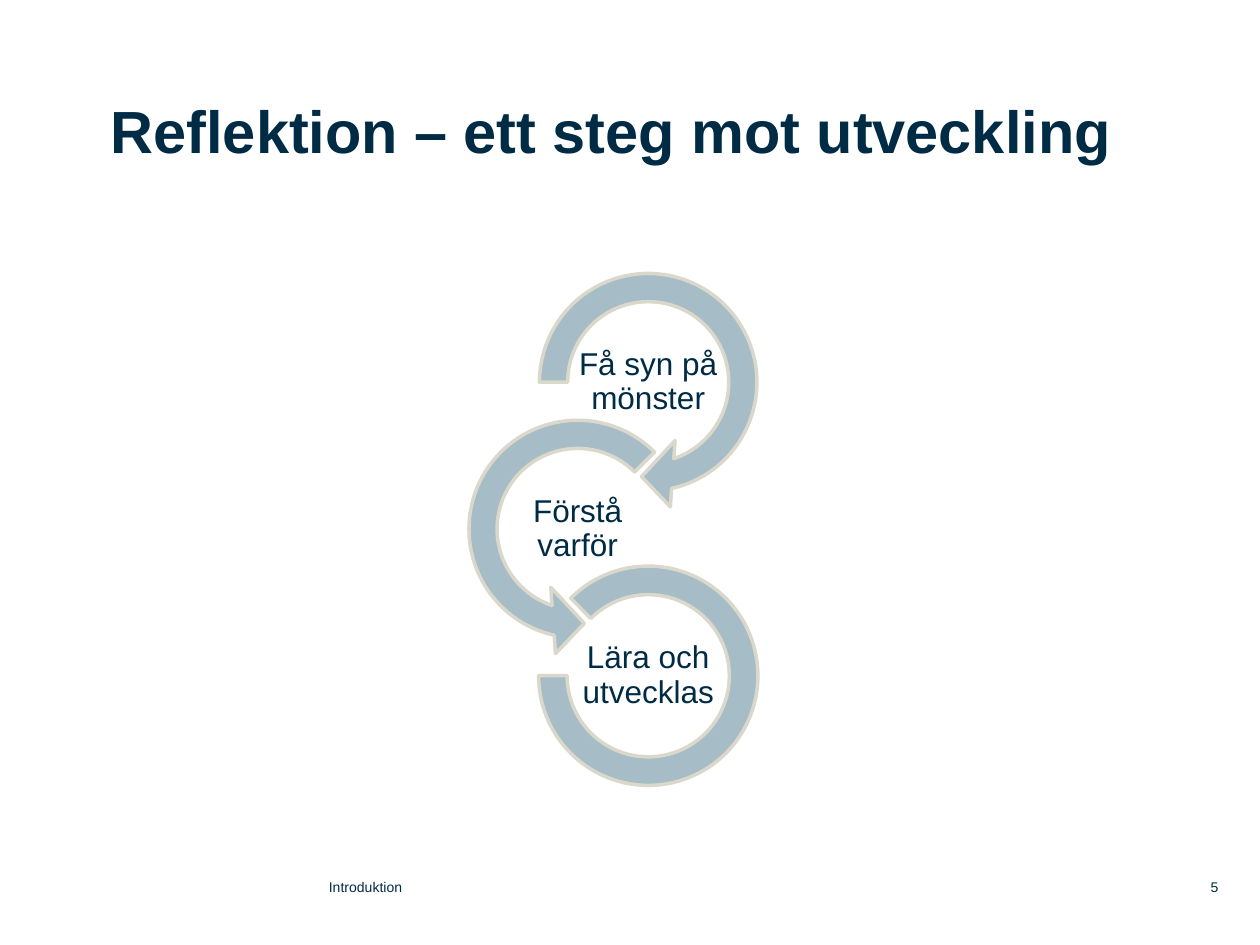
from pptx import Presentation
from pptx import util as u
from pptx.dml.color import RGBColor
from pptx.enum import shapes, text

COLORS = {"ink": "002B45", "ring": "A6BCC6", "edge": "DAD7CB"}
WIDTH, HEIGHT = u.Inches(10), u.Inches(7.5)
KINDS = shapes.MSO_SHAPE
RIGHT_X, LEFT_X = 51.45, 45.85
FIRST_Y, PITCH = 40.45, 15.53
ARROW, ARC = (20.3, 27.07), (17.4, 23.2)
LABEL = (11.3, 7.47)
STEPS = [
    ("Få syn på mönster", RIGHT_X, KINDS.CIRCULAR_ARROW, ARROW,
     (0.11, 11.42, 45, 108, 0.13)),
    ("Förstå varför", LEFT_X, KINDS.LEFT_CIRCULAR_ARROW, ARROW,
     (0.11, 11.42, 63, 189, 0.13)),
    ("Lära och utvecklas", RIGHT_X, KINDS.BLOCK_ARC, ARC, (135, 108, 0.13)),
]


def color(name):
    """Return the named colour of the palette."""
    return RGBColor.from_string(COLORS[name])


def area(x, y, w, h):
    """Turn percentages of the slide into left, top, width and height."""
    return [u.Emu(round(share * side / 100))
            for share, side in zip((x, y, w, h), (WIDTH, HEIGHT) * 2)]


def centred(x, y, size):
    """Return the area of the given size around a centre point."""
    w, h = size
    return area(x - w / 2, y - h / 2, w, h)


def add_text(parent, box, words, size, bold=False, inset=0, align="LEFT",
             anchor="MIDDLE", line=1.0, after=0):
    """Add a wrapped text box with one formatted paragraph."""
    tf = parent.add_textbox(*box).text_frame
    tf.word_wrap = True
    tf.vertical_anchor = getattr(text.MSO_ANCHOR, anchor)
    for side in ("left", "top", "right", "bottom"):
        setattr(tf, f"margin_{side}", u.Inches(inset))
    p = tf.paragraphs[0]
    p.alignment = getattr(text.PP_ALIGN, align)
    p.line_spacing, p.space_after = line, u.Pt(after)
    r = p.add_run()
    r.text = words
    r.font.name, r.font.size, r.font.bold = "Arial", u.Pt(size), bold
    r.font.color.rgb = color("ink")


def add_ring(parent, box, kind, adjustments):
    """Add one outlined ring segment."""
    sp = parent.add_shape(kind, *box)
    sp.shadow.inherit = False
    for i, value in enumerate(adjustments):
        sp.adjustments[i] = value
    sp.fill.solid()
    sp.fill.fore_color.rgb = color("ring")
    sp.line.color.rgb = color("edge")
    sp.line.width = u.Pt(2)


def add_cycle(parent):
    """Add the chain of rings with their labels as one group."""
    group = parent.add_group_shape().shapes
    for i, (words, x, kind, size, adjustments) in enumerate(STEPS):
        y = FIRST_Y + i * PITCH
        add_ring(group, centred(x, y, size), kind, adjustments)
        add_text(group, centred(x, y, LABEL), words, 18, inset=0.01,
                 align="CENTER", line=0.9, after=6.3)


def main():
    """Build the slide and save it."""
    prs = Presentation()
    prs.slide_width, prs.slide_height = WIDTH, HEIGHT
    s = prs.slides.add_slide(prs.slide_layouts[6])
    add_text(s.shapes, area(8.8, 10, 79.7, 18.93),
             "Reflektion – ett steg mot utveckling", 34, bold=True, anchor="TOP")
    add_text(s.shapes, area(26.1, 91.87, 47.2, 3.87), "Introduktion", 8)
    add_cycle(s.shapes)
    add_text(s.shapes, area(92, 91.87, 4.7, 3.87), "5", 8, align="RIGHT")
    prs.save("out.pptx")


if __name__ == "__main__":
    main()
